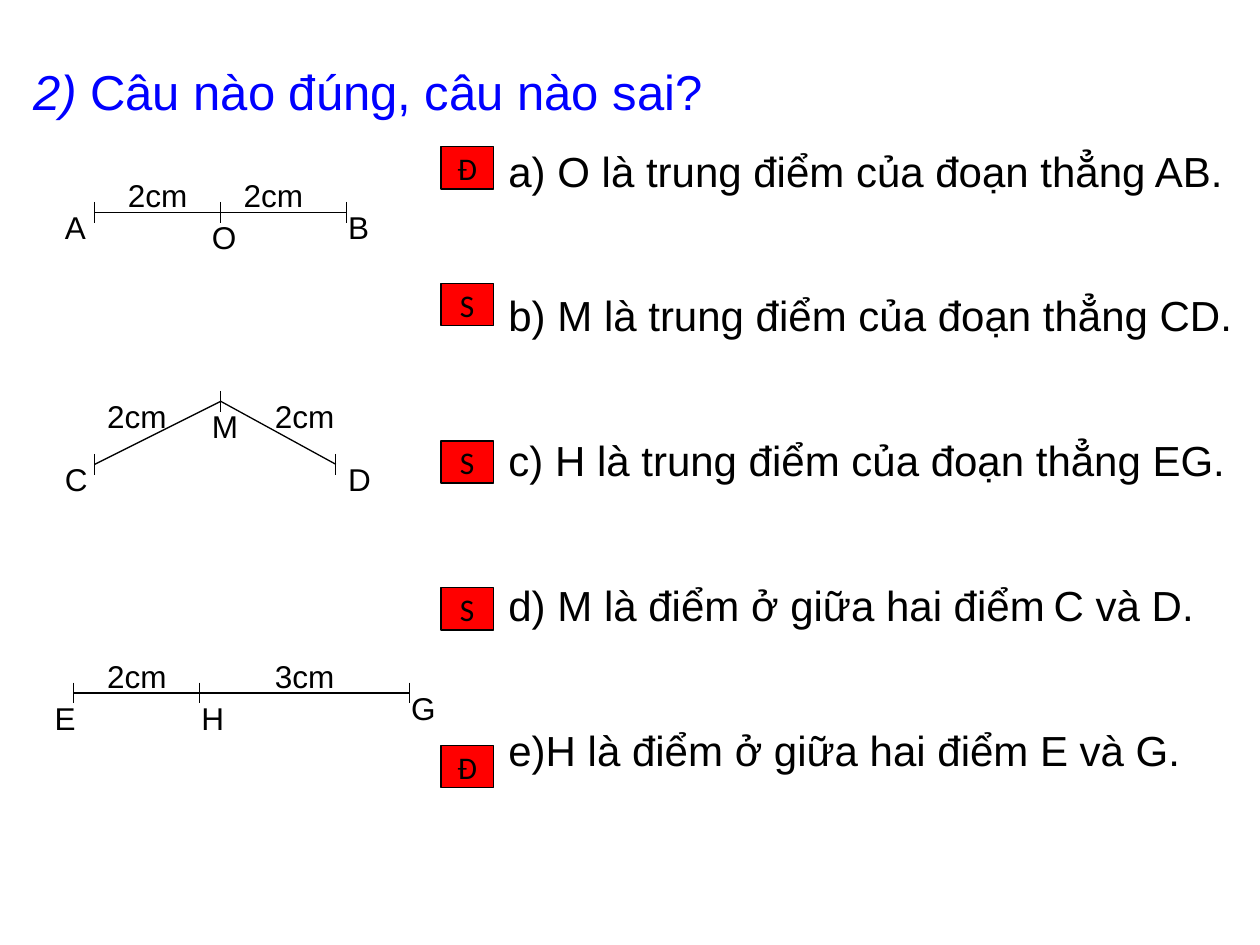
import pptx
import pptx.dml.color
import pptx.enum.shapes
import pptx.enum.text
import pptx.util
from lxml import etree
from pptx.util import Cm, Pt

THEME = {
    "font": "Arial", "mark_font": "Calibri",
    "heading": "0000FF", "ink": "000000", "mark": "FF0000",
    "heading_size": 28, "statement_size": 24, "label_size": 18, "line": 0.75,
}

HEADING = [("2) ", True), ("Câu nào đúng, câu nào sai?", False)]

STATEMENTS = [
    [("a) O là trung điểm của đoạn thẳng AB.", 24)],
    [("b) M là trung điểm của đoạn thẳng CD.", 24)],
    [("c) H là trung điểm của đoạn thẳng EG.", 24)],
    [("d) M là điểm ở giữa hai điểm", 24), (" ", 18), ("C và D.", 24)],
    [("e)H là điểm ở giữa hai điểm E và G.", 24)],
]

ANSWERS = [("Đ", 2.96), ("S", 5.72), ("S", 8.89), ("S", 11.85), ("Đ", 15.03)]

FIGURES = [
    {"points": {"A": (1.91, 4.28), "O": (4.45, 4.28), "B": (6.99, 4.28)},
     "segments": ["AO", "OB"],
     "names": {"A": (1.06, 4.07), "O": (4.02, 4.28), "B": (6.77, 4.07)},
     "measures": [("2cm", 2.33, 3.43), ("2cm", 4.66, 3.43)]},
    {"points": {"C": (1.91, 9.36), "M": (4.45, 8.09), "D": (6.77, 9.36)},
     "segments": ["CM", "MD"],
     "names": {"C": (1.06, 9.15), "M": (4.02, 8.09), "D": (6.77, 9.15)},
     "measures": [("2cm", 1.91, 7.88), ("2cm", 5.29, 7.88)]},
    {"points": {"E": (1.48, 13.97), "H": (4.02, 13.97), "G": (8.26, 13.97)},
     "segments": ["EG"],
     "names": {"E": (0.85, 13.97), "H": (3.81, 13.97), "G": (8.04, 13.76)},
     "measures": [("2cm", 1.91, 13.12), ("3cm", 5.29, 13.12)]},
]

TICK = 0.21
NAME_WIDTH, MEASURE_WIDTH, LABEL_HEIGHT = 0.85, 2.12, 1.02
STATEMENT_INDENT = 9.58
FIRST_GAP, STATEMENT_GAP = 14, 54


def color(key):
    return pptx.dml.color.RGBColor.from_string(THEME[key])


def set_font(font, size, ink="ink", face="font"):
    font.name = THEME[face]
    font.size = Pt(size)
    font.color.rgb = color(ink)


def add_line(shapes, start, end):
    segment = shapes.add_connector(
        pptx.enum.shapes.MSO_CONNECTOR.STRAIGHT,
        *(Cm(value) for value in (*start, *end)))
    segment.line.color.rgb = color("ink")
    segment.line.width = Pt(THEME["line"])
    etree.SubElement(segment._element.spPr, pptx.oxml.ns.qn("a:effectLst"))


def add_label(shapes, text, left, top, width):
    label = shapes.add_textbox(Cm(left), Cm(top), Cm(width), Cm(LABEL_HEIGHT))
    label.text_frame.word_wrap = True
    paragraph = label.text_frame.paragraphs[0]
    paragraph.text = text
    set_font(paragraph.font, THEME["label_size"])


def add_question(shapes):
    question = shapes.add_textbox(Cm(0.42), Cm(1.12), Cm(26.88), Cm(15.3)).text_frame
    question.word_wrap = True
    heading = question.paragraphs[0]
    set_font(heading.font, THEME["heading_size"], "heading")
    for text, italic in HEADING:
        part = heading.add_run()
        part.text = text
        part.font.italic = italic
    for index, parts in enumerate(STATEMENTS):
        statement = question.add_paragraph()
        statement.space_before = Pt(STATEMENT_GAP if index else FIRST_GAP)
        statement._p.get_or_add_pPr().set("marL", str(Cm(STATEMENT_INDENT)))
        set_font(statement.font, THEME["statement_size"])
        for text, size in parts:
            part = statement.add_run()
            part.text = text
            if size != THEME["statement_size"]:
                part.font.size = Pt(size)


def add_figure(shapes, figure):
    members = shapes.add_group_shape().shapes
    points = figure["points"]
    for first, last in figure["segments"]:
        add_line(members, points[first], points[last])
    for x, y in points.values():
        add_line(members, (x, y - TICK), (x, y + TICK))
    for name, (left, top) in figure["names"].items():
        add_label(members, name, left, top, NAME_WIDTH)
    for length, left, top in figure["measures"]:
        add_label(members, length, left, top, MEASURE_WIDTH)


def add_answer(shapes, verdict, top):
    answer = shapes.add_shape(
        pptx.enum.shapes.MSO_SHAPE.RECTANGLE, Cm(8.89), Cm(top), Cm(1.06), Cm(0.85))
    answer.shadow.inherit = False
    answer.fill.solid()
    answer.fill.fore_color.rgb = color("mark")
    answer.line.color.rgb = color("ink")
    answer.line.width = Pt(THEME["line"])
    answer.text_frame.word_wrap = False
    answer.text_frame.vertical_anchor = pptx.enum.text.MSO_ANCHOR.MIDDLE
    paragraph = answer.text_frame.paragraphs[0]
    paragraph.text = verdict
    paragraph.alignment = pptx.enum.text.PP_ALIGN.CENTER
    set_font(paragraph.font, THEME["label_size"], face="mark_font")


def main():
    deck = pptx.Presentation()
    deck.slide_width, deck.slide_height = Cm(25.4), Cm(19.05)
    shapes = deck.slides.add_slide(deck.slide_layouts[6]).shapes
    add_question(shapes)
    for figure in FIGURES:
        add_figure(shapes, figure)
    for verdict, top in ANSWERS:
        add_answer(shapes, verdict, top)
    deck.save("out.pptx")


if __name__ == "__main__":
    main()
